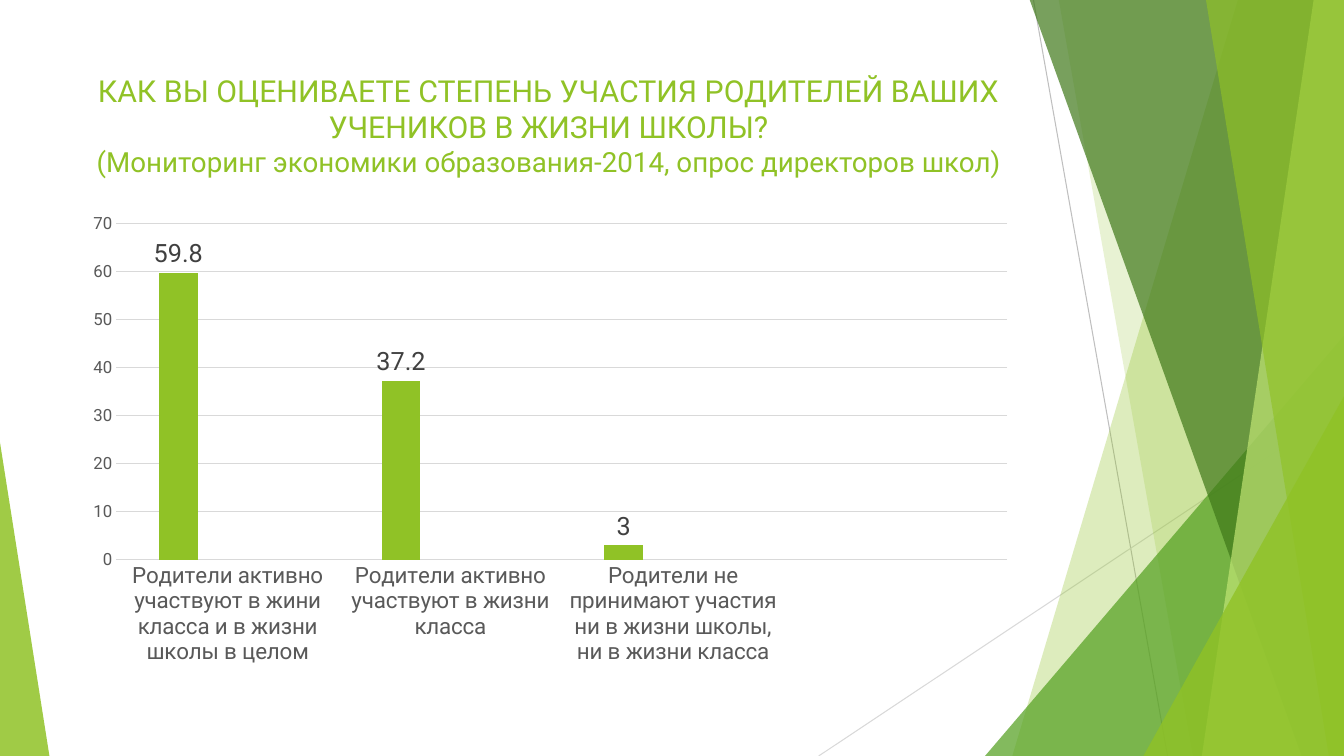
from dataclasses import dataclass

from lxml import etree
from pptx import Presentation
from pptx.chart.data import CategoryChartData
from pptx.dml.color import RGBColor
from pptx.enum.chart import XL_CHART_TYPE, XL_LABEL_POSITION, XL_TICK_MARK
from pptx.enum.shapes import MSO_CONNECTOR, MSO_SHAPE
from pptx.enum.text import MSO_ANCHOR, PP_ALIGN
from pptx.oxml import parse_xml
from pptx.oxml.ns import nsdecls, qn
from pptx.util import Emu, Pt

COLUMN = XL_CHART_TYPE.COLUMN_CLUSTERED
ABOVE = XL_LABEL_POSITION.OUTSIDE_END
NO_TICK = XL_TICK_MARK.NONE
STRAIGHT = MSO_CONNECTOR.STRAIGHT
WEDGE = MSO_SHAPE.RIGHT_TRIANGLE
TRIANGLE = MSO_SHAPE.ISOSCELES_TRIANGLE
TOP = MSO_ANCHOR.TOP
CENTER = PP_ALIGN.CENTER

SCALE = 9144
WIDE, TALL = 1333, 750
FONT = "Roboto"
LIME, GREEN, GOLD = "90C226", "54A021", "E6B91E"
PALE, GRAY = "D9D9D9", "595959"


@dataclass
class Ray:
    x1: int
    y1: int
    x2: int
    y2: int
    color: str


@dataclass
class Band:
    head: int
    foot: int
    color: str
    alpha: int


@dataclass
class Peak:
    left: int
    top: int
    width: int
    tip: int
    color: str
    alpha: int


RAYS = [Ray(1025, 0, 1158, TALL, "BFBFBF"), Ray(WIDE, 403, 812, TALL, PALE)]
SHARDS = [
    Band(1228, 1004, LIME, 30),
    Band(1050, 1183, LIME, 20),
    Peak(977, 333, 356, 1, GREEN, 72),
    Band(1021, 1291, "3F7819", 70),
    Band(1303, 1192, "C0E474", 70),
    Band(1196, 1318, LIME, 65),
    Peak(1134, 393, 199, 1, LIME, 80),
    Peak(0, 439, 49, 0, LIME, 85),
]
HEADING = [
    ("КАК ВЫ ОЦЕНИВАЕТЕ СТЕПЕНЬ УЧАСТИЯ РОДИТЕЛЕЙ ВАШИХ УЧЕНИКОВ В ЖИЗНИ ШКОЛЫ?", 21.6),
    ("(Мониторинг экономики образования-2014, опрос директоров школ)", 19.8),
]
ANSWERS = {
    "Родители активно участвуют в жини класса и в жизни школы в целом": 59.8,
    "Родители активно участвуют в жизни класса": 37.2,
    "Родители не принимают участия ни в жизни школы, ни в жизни класса": 3,
    "": None,
}
PLOT = {"x": 0.044, "y": 0.023, "w": 0.94, "h": 0.696}


def px(value: int) -> Emu:
    return Emu(value * SCALE)


def rgb(code: str) -> RGBColor:
    return RGBColor.from_string(code)


def style(font, size: float, color: str) -> None:
    font.name = FONT
    font.size = Pt(size)
    font.color.rgb = rgb(color)


def stroke(line, color: str) -> None:
    line.color.rgb = rgb(color)
    line.width = Pt(0.75)


def draw_ray(slide, ray: Ray) -> None:
    line = slide.shapes.add_connector(STRAIGHT, px(ray.x1), px(ray.y1), px(ray.x2), px(ray.y2))
    stroke(line.line, ray.color)
    etree.SubElement(line._element.spPr, qn("a:effectLst"))


def draw_shard(slide, shard: Band | Peak) -> None:
    if isinstance(shard, Band):
        form = slide.shapes.build_freeform(shard.head, -1, scale=SCALE)
        form.add_line_segments([(WIDE, -1), (WIDE, TALL), (shard.foot, TALL)])
        shape = form.convert_to_shape()
    else:
        shape = slide.shapes.add_shape(
            TRIANGLE, px(shard.left), px(shard.top), px(shard.width), px(TALL - shard.top)
        )
        shape.adjustments[0] = shard.tip
    shape.shadow.inherit = False
    shape.line.fill.background()
    shape.fill.solid()
    shape.fill.fore_color.rgb = rgb(shard.color)
    tint = shape._element.spPr.find(qn("a:solidFill"))[0]
    etree.SubElement(tint, qn("a:alpha"), val=str(shard.alpha * 1000))


def draw_title(slide) -> None:
    frame = slide.shapes.add_textbox(px(74), px(67), px(940), px(144)).text_frame
    frame.word_wrap = True
    frame.vertical_anchor = TOP
    para = frame.paragraphs[0]
    para.alignment = CENTER
    for index, (text, size) in enumerate(HEADING):
        if index:
            para.add_line_break()
        run = para.add_run()
        run.text = text
        style(run.font, size, LIME)


def draw_chart(slide) -> None:
    data = CategoryChartData()
    data.categories = list(ANSWERS)
    data.add_series("Series 1", list(ANSWERS.values()))
    for name in ("Series 2", "Series 3"):
        data.add_series(name, [None] * len(ANSWERS))
    chart = slide.shapes.add_chart(COLUMN, px(74), px(211), px(940), px(479), data).chart
    chart.has_legend = False
    chart.has_title = False
    style(chart.font, 10, "000000")

    plot = chart.plots[0]
    plot.vary_by_categories = False
    plot.gap_width = 219
    plot.overlap = -27
    for series, color in zip(plot.series, (LIME, GREEN, GOLD)):
        series.format.fill.solid()
        series.format.fill.fore_color.rgb = rgb(color)
    labels = plot.series[0].data_labels
    labels.show_value = True
    labels.position = ABOVE
    style(labels.font, 18, "404040")

    for axis, size in ((chart.category_axis, 16), (chart.value_axis, 12)):
        axis.major_tick_mark = NO_TICK
        axis.minor_tick_mark = NO_TICK
        style(axis.tick_labels.font, size, GRAY)
    stroke(chart.category_axis.format.line, PALE)
    scale = chart.value_axis
    scale.minimum_scale, scale.maximum_scale, scale.major_unit = 0, 70, 10
    scale.format.line.fill.background()
    stroke(scale.major_gridlines.format.line, PALE)

    area = chart._chartSpace.chart.plotArea
    for old in area.findall(qn("c:layout")):
        area.remove(old)
    modes = "".join(f'<c:{key}Mode val="edge"/>' for key in "xy")
    sizes = "".join(f'<c:{key} val="{value}"/>' for key, value in PLOT.items())
    area.insert(0, parse_xml(
        f'<c:layout {nsdecls("c")}><c:manualLayout><c:layoutTarget val="inner"/>'
        f"{modes}{sizes}</c:manualLayout></c:layout>"
    ))


def main() -> None:
    deck = Presentation()
    deck.slide_width, deck.slide_height = px(WIDE), px(TALL)
    slide = deck.slides.add_slide(deck.slide_layouts[6])
    for ray in RAYS:
        draw_ray(slide, ray)
    for shard in SHARDS:
        draw_shard(slide, shard)
    draw_title(slide)
    draw_chart(slide)
    deck.save("out.pptx")


if __name__ == "__main__":
    main()
